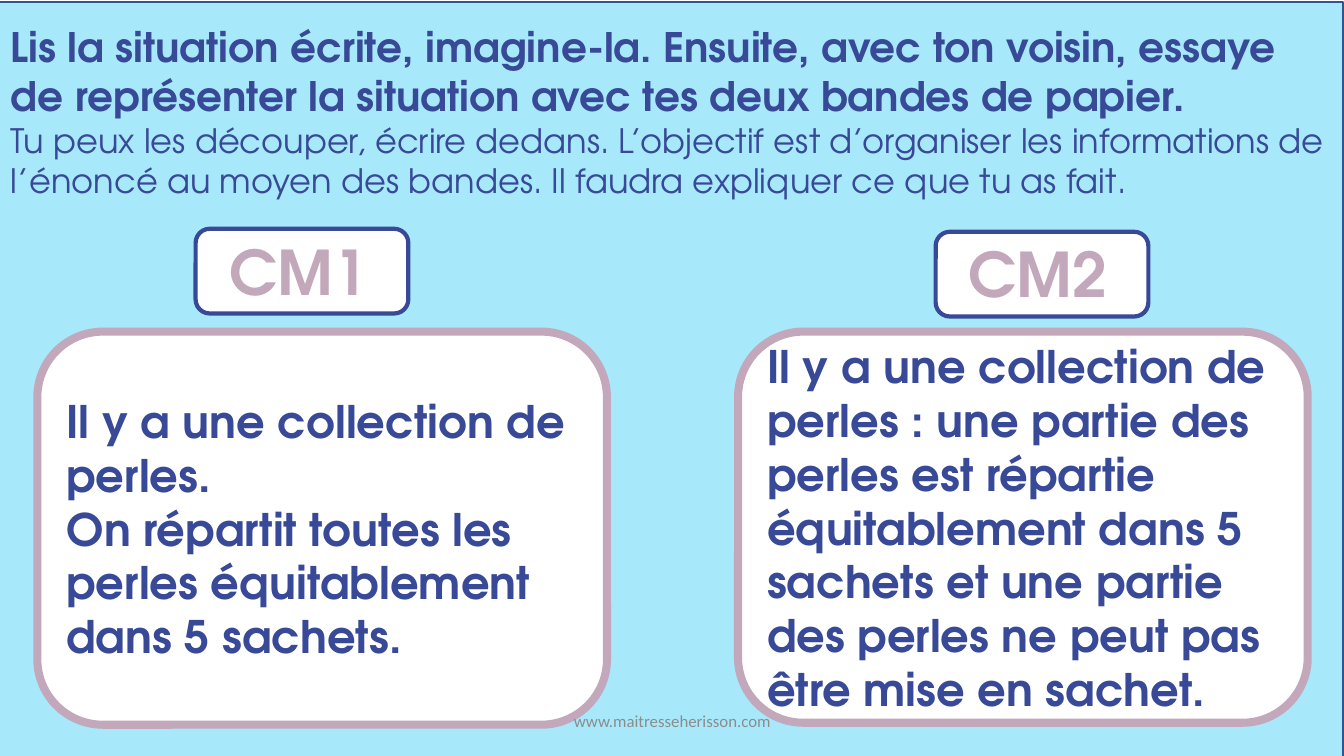
from dataclasses import dataclass

import pptx
import pptx.dml.color
import pptx.enum.shapes
import pptx.enum.text
import pptx.util

Inches = pptx.util.Inches
Pt = pptx.util.Pt
RGB = pptx.dml.color.RGBColor
SHAPE = pptx.enum.shapes.MSO_SHAPE
ANCHOR = pptx.enum.text.MSO_ANCHOR
ALIGN = pptx.enum.text.PP_ALIGN


@dataclass(frozen=True)
class Theme:
    sky: RGB = RGB(0xA7, 0xE8, 0xFB)
    edge: RGB = RGB(0x32, 0x54, 0x91)
    navy: RGB = RGB(0x37, 0x49, 0x97)
    mauve: RGB = RGB(0xC3, 0xA7, 0xBA)
    white: RGB = RGB(0xFF, 0xFF, 0xFF)
    grey: RGB = RGB(0x8C, 0x8C, 0x8C)
    main_font: str = "TeX Gyre Adventor"
    footer_font: str = "Calibri"
    level_size: float = 44
    problem_size: float = 32
    instruction_size: float = 29
    hint_size: float = 24
    footer_size: float = 12


THEME = Theme()


@dataclass(frozen=True)
class Box:
    left: float
    top: float
    width: float
    height: float

    def lengths(self) -> list:
        return [Inches(v) for v in (self.left, self.top, self.width, self.height)]


@dataclass(frozen=True)
class Line:
    text: str
    size: float
    color: RGB = THEME.navy
    bold: bool = True
    font: str = THEME.main_font
    align: ALIGN = ALIGN.LEFT


@dataclass(frozen=True)
class Level:
    name: str
    badge: Box
    label: Box
    panel: Box
    problem: tuple[str, ...]


LEVELS = (
    Level(
        "CM1",
        Box(1.94, 2.27, 2.11, 0.84),
        Box(2.18, 2.27, 1.63, 0.84),
        Box(0.37, 3.29, 5.65, 3.9),
        (
            "Il y a une collection de perles.",
            "On répartit toutes les perles équitablement dans 5 sachets.",
        ),
    ),
    Level(
        "CM2",
        Box(9.28, 2.3, 2.11, 0.84),
        Box(9.51, 2.29, 1.63, 0.84),
        Box(7.32, 3.29, 5.65, 3.88),
        (
            "Il y a une collection de perles : une partie des perles est répartie "
            "équitablement dans 5 sachets et une partie des perles ne peut pas "
            "être mise en sachet.",
        ),
    ),
)


def write(frame, lines: list[Line], anchor: ANCHOR) -> None:
    frame.word_wrap = True
    frame.vertical_anchor = anchor
    for index, line in enumerate(lines):
        paragraph = frame.add_paragraph() if index else frame.paragraphs[0]
        paragraph.alignment = line.align
        run = paragraph.add_run()
        run.text = line.text
        formats = {"name": line.font, "size": Pt(line.size), "bold": line.bold}
        for attribute, value in formats.items():
            setattr(run.font, attribute, value)
        run.font.color.rgb = line.color


def add_panel(slide, kind: SHAPE, box: Box, fill: RGB, edge: RGB, weight: float):
    panel = slide.shapes.add_shape(kind, *box.lengths())
    panel.shadow.inherit = False
    panel.fill.solid()
    panel.fill.fore_color.rgb = fill
    panel.line.color.rgb = edge
    panel.line.width = Pt(weight)
    return panel


def add_text(slide, box: Box, lines: list[Line], anchor: ANCHOR = ANCHOR.TOP) -> None:
    write(slide.shapes.add_textbox(*box.lengths()).text_frame, lines, anchor)


def add_level(slide, level: Level) -> None:
    # Badge with the class name
    add_panel(slide, SHAPE.ROUNDED_RECTANGLE, level.badge, THEME.white, THEME.navy, 3)
    add_text(slide, level.label, [Line(level.name, THEME.level_size, THEME.mauve)])
    # Panel with the problem
    panel = add_panel(
        slide, SHAPE.ROUNDED_RECTANGLE, level.panel, THEME.white, THEME.mauve, 5.75
    )
    problem = [Line(text, THEME.problem_size) for text in level.problem]
    write(panel.text_frame, problem, ANCHOR.MIDDLE)


def main() -> None:
    deck = pptx.Presentation()
    deck.slide_width = Inches(13.33)
    deck.slide_height = Inches(7.5)
    slide = deck.slides.add_slide(deck.slide_layouts[6])

    # Sky backdrop
    backdrop = Box(-0.01, 0.02, 13.33, 7.5)
    add_panel(slide, SHAPE.RECTANGLE, backdrop, THEME.sky, THEME.edge, 1)

    # One problem per class level
    for level in LEVELS:
        add_level(slide, level)

    # Instructions
    instructions = [
        Line(
            "Lis la situation écrite, imagine-la. Ensuite, avec ton voisin, essaye "
            "de représenter la situation avec tes deux bandes de papier.",
            THEME.instruction_size,
        ),
        Line(
            "Tu peux les découper, écrire dedans. L’objectif est d’organiser les "
            "informations de l’énoncé au moyen des bandes. Il faudra expliquer ce "
            "que tu as fait.",
            THEME.hint_size,
            bold=False,
        ),
    ]
    add_text(slide, Box(0.01, 0.17, 13.33, 1.88), instructions)

    # Footer
    footer = Line(
        "www.maitresseherisson.com",
        THEME.footer_size,
        THEME.grey,
        False,
        THEME.footer_font,
        ALIGN.CENTER,
    )
    add_text(slide, Box(4.42, 6.95, 4.5, 0.4), [footer], ANCHOR.MIDDLE)

    deck.save("out.pptx")


if __name__ == "__main__":
    main()
